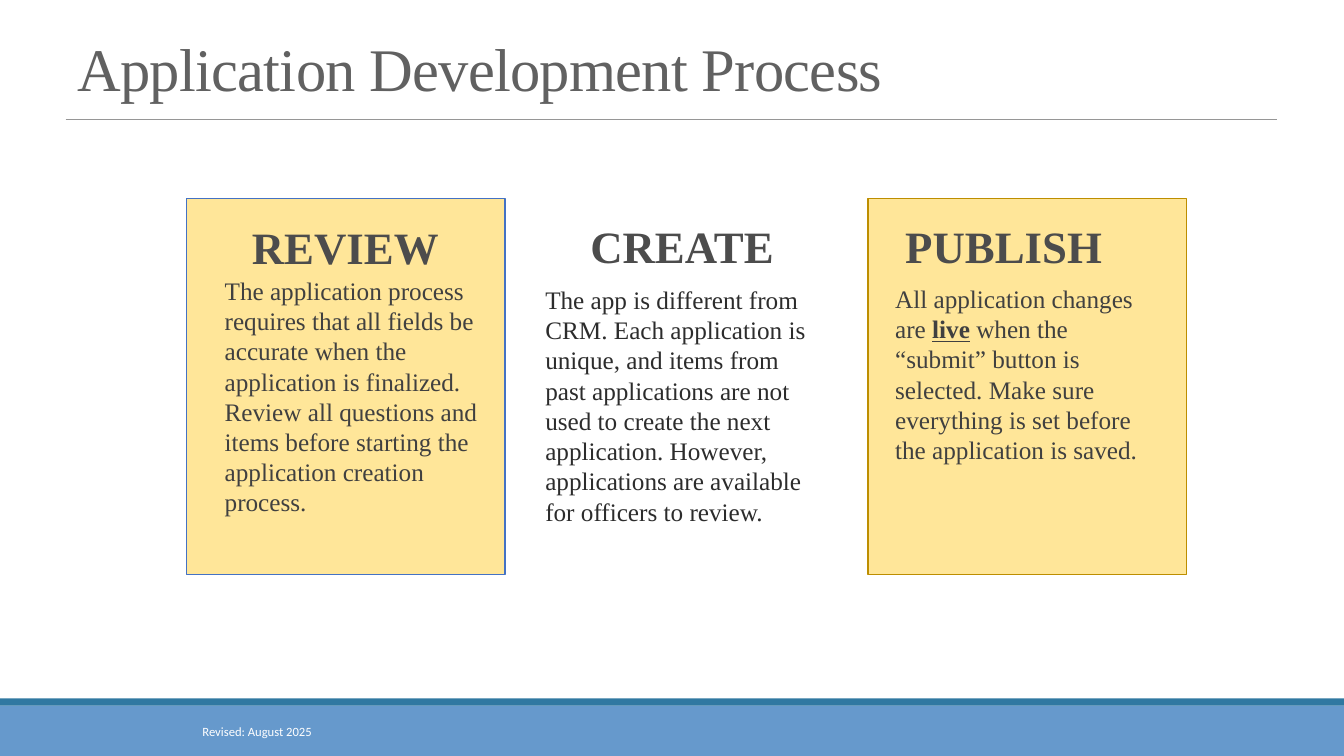
from dataclasses import dataclass

from lxml import etree
from pptx import Presentation
from pptx import util as u
from pptx.dml.color import RGBColor
from pptx.enum import shapes, text
from pptx.oxml.ns import qn

PX = u.Inches(1) // 100
SLIDE_WIDTH, SLIDE_HEIGHT = 1333, 750


@dataclass(frozen=True)
class Theme:
    serif: str = "Times New Roman"
    sans: str = "Calibri"
    title_size: float = 43.2
    heading_size: float = 32
    body_size: float = 18
    footer_size: float = 9
    title: str = "616161"
    heading: str = "4C4C4C"
    body: str = "404040"
    body_dark: str = "2C2C2C"
    white: str = "FFFFFF"
    rule: str = "969696"
    card: str = "FFE699"
    blue_edge: str = "4472C4"
    gold_edge: str = "BD8E00"
    footer: str = "6699CC"
    footer_edge: str = "3078A1"


THEME = Theme()


@dataclass(frozen=True)
class Step:
    """One column; heading and body boxes are relative to the column's corner."""
    heading: str
    paragraphs: list
    heading_box: tuple
    body_box: tuple
    body_color: str = THEME.body
    edge: str = ""


STEPS = [
    Step("REVIEW",
         [["The application process requires that all fields be accurate when the "
           "application is finalized. Review all questions and items before starting "
           "the application creation process."]],
         (0, 16, 315, 64), (28, 71, 295, 252), edge=THEME.blue_edge),
    Step("CREATE",
         [["The app is different from CRM. Each application is unique, and items from "
           "past applications are not used to create the next application. However, "
           "applications are available for officers to review."]],
         (-4, 15, 315, 64), (8, 80, 279, 252), body_color=THEME.body_dark),
    Step("PUBLISH",
         [["All application changes are ", ("live", True),
           " when the “submit” button is selected. Make sure"],
          ["everything is set before the application is saved."]],
         (-23, 15, 315, 64), (17, 79, 276, 192), edge=THEME.gold_edge),
]


def px(*lengths):
    return [length * PX for length in lengths]


def add_text(slide, box, paragraphs, *, size, color, font=THEME.serif, bold=False,
             align=text.PP_ALIGN.LEFT, anchor=text.MSO_ANCHOR.TOP,
             line_spacing=None, tracking=None):
    """Paragraphs are lists of runs; a run given as (words, True) is emphasised."""
    frame = slide.shapes.add_textbox(*px(*box)).text_frame
    frame.word_wrap = True
    frame.vertical_anchor = anchor
    for index, runs in enumerate(paragraphs):
        paragraph = frame.add_paragraph() if index else frame.paragraphs[0]
        paragraph.alignment = align
        if line_spacing:
            paragraph.line_spacing = line_spacing
        for item in runs:
            words, emphasis = (item, False) if isinstance(item, str) else item
            run = paragraph.add_run()
            run.text = words
            run.font.name = font
            run.font.size = u.Pt(size)
            run.font.bold = bold or emphasis
            run.font.underline = emphasis
            run.font.color.rgb = RGBColor.from_string(color)
            if tracking:
                run.font._element.set("spc", str(tracking))


def add_rectangle(slide, box, fill, edge=""):
    shape = slide.shapes.add_shape(shapes.MSO_SHAPE.RECTANGLE, *px(*box))
    shape.shadow.inherit = False
    shape.fill.solid()
    shape.fill.fore_color.rgb = RGBColor.from_string(fill)
    if edge:
        shape.line.color.rgb = RGBColor.from_string(edge)
        shape.line.width = u.Pt(1.25)
    else:
        shape.line.fill.background()


def add_header(slide, box):
    left, top, width, height = box
    rule_top = top + height
    rule = slide.shapes.add_connector(
        shapes.MSO_CONNECTOR.STRAIGHT, *px(left, rule_top, left + width, rule_top))
    rule.line.color.rgb = RGBColor.from_string(THEME.rule)
    rule.line.width = u.Pt(0.5)
    etree.SubElement(rule._element.spPr, qn("a:effectLst"))
    add_text(slide, (left + 2, top, 943, height - 10),
             [["Application Development Process"]],
             size=THEME.title_size, color=THEME.title,
             anchor=text.MSO_ANCHOR.BOTTOM, line_spacing=0.85, tracking=-50)


def add_step(slide, box, step):
    left, top = box[:2]

    def place(offset):
        return (left + offset[0], top + offset[1], *offset[2:])

    if step.edge:
        add_rectangle(slide, box, THEME.card, step.edge)
    add_text(slide, place(step.heading_box), [[step.heading]],
             size=THEME.heading_size, color=THEME.heading, bold=True,
             align=text.PP_ALIGN.CENTER)
    add_text(slide, place(step.body_box), step.paragraphs,
             size=THEME.body_size, color=step.body_color)


def add_steps(slide, box):
    left, top, width, height = box
    column_width = 316
    pitch = (width - column_width) // (len(STEPS) - 1)
    # The last column sits flush with the right edge of the box.
    start = left + width - column_width - pitch * (len(STEPS) - 1)
    for index, step in enumerate(STEPS):
        add_step(slide, (start + index * pitch, top, column_width, height), step)


def add_footer(slide, box):
    left, top, width, height = box
    edge_height = 7
    add_rectangle(slide, (left, top + edge_height, width, height - edge_height),
                  THEME.footer)
    add_rectangle(slide, (left, top, width, edge_height), THEME.footer_edge)
    add_text(slide, (left + 120, top + 13, 270, 40), [["Revised: August 2025"]],
             size=THEME.footer_size, color=THEME.white, font=THEME.sans,
             align=text.PP_ALIGN.CENTER, anchor=text.MSO_ANCHOR.MIDDLE)


def main():
    presentation = Presentation()
    presentation.slide_width, presentation.slide_height = px(SLIDE_WIDTH, SLIDE_HEIGHT)
    slide = presentation.slides.add_slide(presentation.slide_layouts[6])
    add_footer(slide, (0, 693, SLIDE_WIDTH, 57))
    add_header(slide, (65, 31, 1202, 87))
    add_steps(slide, (184, 197, 993, 373))
    presentation.save("out.pptx")


if __name__ == "__main__":
    main()
